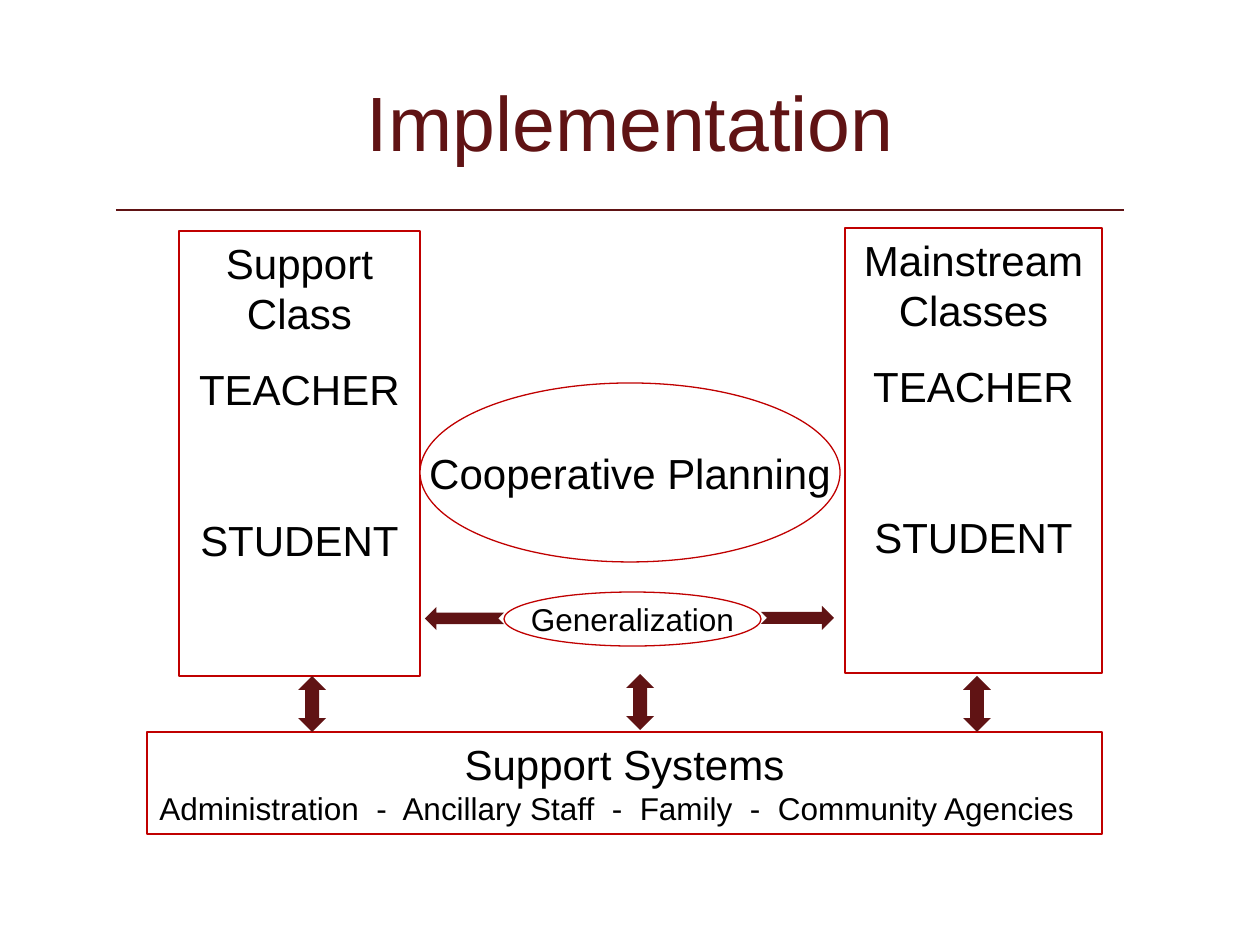
from lxml import etree
from pptx import Presentation
from pptx.dml.color import RGBColor
from pptx.enum.shapes import MSO_CONNECTOR, MSO_SHAPE as Preset
from pptx.enum.text import MSO_ANCHOR as Anchor, PP_ALIGN as Align
from pptx.oxml.ns import qn
from pptx.util import Pt

PX = 914400 / 126
MAROON, RED, WHITE, BLACK = "601314", "C00000", "FFFFFF", "000000"


def add_part(preset, box, fill=None, line=None, rotation=0):
    part = slide.shapes.add_shape(preset, *(round(v * PX) for v in box))
    part.shadow.inherit = False
    part.rotation = rotation
    for paint, color in ((part.fill, fill), (part.line.fill, line)):
        if color:
            paint.solid()
            paint.fore_color.rgb = RGBColor.from_string(color)
        else:
            paint.background()
    if line:
        part.line.width = Pt(0.75)
    return part


def write(part, lines, anchor=Anchor.TOP, wrap=True, color=BLACK):
    """Fill a shape with lines of (text, size in pt, gap above in px, alignment)."""
    frame = part.text_frame
    frame.word_wrap = wrap
    frame.vertical_anchor = anchor
    for i, (text, size, gap, align) in enumerate(lines):
        paragraph = frame.add_paragraph() if i else frame.paragraphs[0]
        paragraph.alignment = align
        if gap:
            paragraph.space_before = round(gap * PX)
        run = paragraph.add_run()
        run.text = text
        run.font.name = "Arial"
        run.font.size = Pt(size)
        run.font.color.rgb = RGBColor.from_string(color)


prs = Presentation()
prs.slide_width, prs.slide_height = round(1260 * PX), round(945 * PX)
slide = prs.slides.add_slide(prs.slide_layouts[6])

# Title and the rule below it
rule = slide.shapes.add_connector(
    MSO_CONNECTOR.STRAIGHT, *(round(v * PX) for v in (116, 210, 1124, 210)))
rule.line.color.rgb = RGBColor.from_string(MAROON)
rule.line.width = Pt(1.5)
etree.SubElement(rule._element.spPr, qn("a:effectLst"))

title = slide.shapes.add_textbox(*(round(v * PX) for v in (95, 42, 1071, 157)))
write(title, [("Implementation", 44, 0, Align.CENTER)], Anchor.MIDDLE, color=MAROON)

# The two classes, each with its teacher and student
for box, heading in (
    ((179, 231, 241, 445), ["Support Class"]),
    ((845, 228, 257, 445), ["Mainstream", "Classes"]),
):
    lines = [(text, 24, 0, Align.CENTER) for text in heading]
    lines += [("TEACHER", 24, 25, Align.CENTER), ("STUDENT", 24, 101, Align.CENTER)]
    write(add_part(Preset.RECTANGLE, box, line=RED), lines)

# What links the classes
for box, link, size in (
    ((420, 383, 420, 179), "Cooperative Planning", 24),
    ((504, 592, 257, 54), "Generalization", 18),
):
    oval = add_part(Preset.OVAL, box, WHITE, RED)
    write(oval, [(link, size, 0, Align.CENTER)], Anchor.MIDDLE, wrap=False)

for box, rotation in (((761, 606, 73, 24), 0), ((425, 607, 79, 23), 180)):
    add_part(Preset.NOTCHED_RIGHT_ARROW, box, MAROON, rotation=rotation)

# Support systems underneath
systems = ["Administration", "Ancillary Staff", "Family", "Community Agencies"]
support = add_part(Preset.RECTANGLE, (147, 732, 955, 102), line=RED)
write(support, [("Support Systems", 24, 0, Align.CENTER),
                ("  -  ".join(systems), 18, 0, Align.LEFT)])

for left, top in ((284, 690), (949, 690), (612, 688)):
    add_part(Preset.LEFT_RIGHT_ARROW, (left, top, 56, 28), MAROON, rotation=90)

prs.save("out.pptx")
